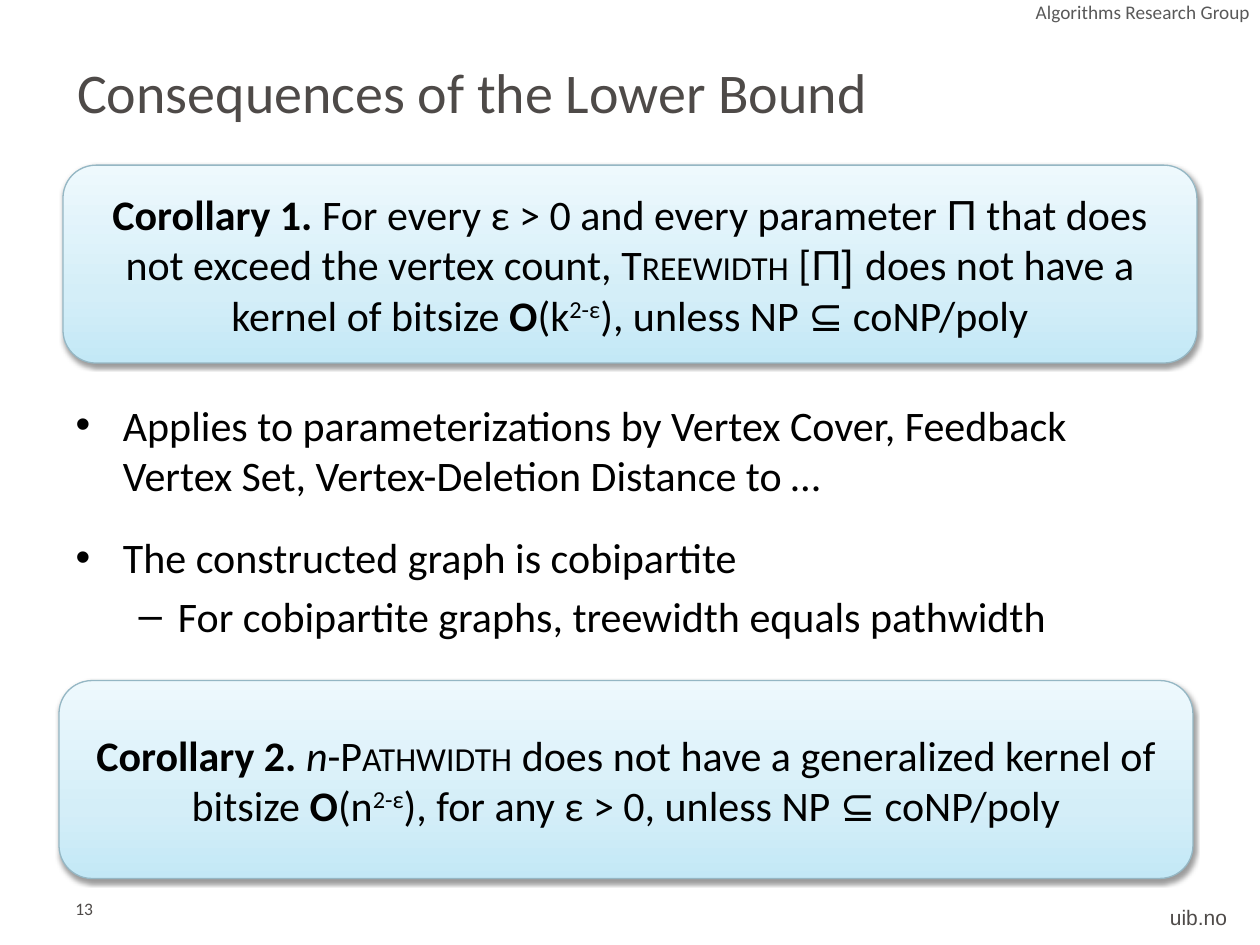
"""Build the slide on consequences of the treewidth kernel lower bound."""

from dataclasses import dataclass

import lxml.etree
import pptx
import pptx.dml.color
import pptx.enum.shapes
import pptx.enum.text
import pptx.oxml.ns
import pptx.util
from pptx.util import Cm

ALIGN = pptx.enum.text.PP_ALIGN
ANCHOR = pptx.enum.text.MSO_ANCHOR
AUTO_SIZE = pptx.enum.text.MSO_AUTO_SIZE
qualified = pptx.oxml.ns.qn

BLACK = "000000"
BODY_SIZE = 24
GRADIENT = ((0, "C3E8F6"), (35, "D4EEF8"), (100, "EEF9FD"))


@dataclass(frozen=True)
class Box:
    left: float
    top: float
    width: float
    height: float

    def lengths(self) -> tuple:
        return Cm(self.left), Cm(self.top), Cm(self.width), Cm(self.height)


@dataclass(frozen=True)
class Run:
    text: str
    size: float = BODY_SIZE
    color: str = BLACK
    font: str = "Calibri"
    bold: bool = False
    italic: bool = False
    small_caps: bool = False
    superscript: bool = False


@dataclass(frozen=True)
class Corollary:
    box: Box
    runs: tuple[Run, ...]


@dataclass(frozen=True)
class Label:
    box: Box
    run: Run
    alignment: ALIGN
    margins: tuple[float, float, float, float]
    wrap: bool = True


@dataclass(frozen=True)
class Bullet:
    text: str
    level: int = 0
    space_before: float | None = None


TITLE_BOX = Box(1.3, 0.97, 22.86, 1.75)
TITLE = Run("Consequences of the Lower Bound", 32, "4E4A48")
BODY_BOX = Box(1.27, 7.92, 22.86, 9.09)
BULLETS = (
    Bullet(
        "Applies to parameterizations by Vertex Cover, Feedback Vertex Set, "
        "Vertex-Deletion Distance to …",
        space_before=0,
    ),
    Bullet("The constructed graph is cobipartite", space_before=18),
    Bullet("For cobipartite graphs, treewidth equals pathwidth", level=1),
)
LABELS = (
    Label(Box(23.32, 18.11, 1.68, 0.76), Run("uib.no", 12, "4E4A48", "Arial"),
          ALIGN.CENTER, (0.25, 0.13, 0.25, 0.13), wrap=False),
    Label(Box(11.91, 0, 13.54, 0.51), Run("Algorithms Research Group", 11, "595959"),
          ALIGN.RIGHT, (0.25, 0, 0.25, 0)),
    Label(Box(1.27, 18.11, 5.44, 0.76), Run("13", 10, "4E4A48"),
          ALIGN.LEFT, (0.25, 0, 0.25, 0.13)),
)
COROLLARIES = (
    Corollary(Box(1.27, 3.33, 22.86, 3.99), (
        Run("Corollary 1. ", bold=True),
        Run("For every ε > 0 and every parameter "),
        Run("Π", font="Arial"),
        Run(" that does not exceed the vertex count, "),
        Run("Treewidth", small_caps=True),
        Run(" ["),
        Run("Π] ", font="Arial"),
        Run("does not have a kernel of bitsize "),
        Run("O", bold=True),
        Run("(k"),
        Run("2-ε", superscript=True),
        Run("), unless NP ⊆ coNP/poly"),
    )),
    Corollary(Box(1.19, 13.72, 22.86, 3.99), (
        Run("Corollary 2. ", bold=True),
        Run("n", italic=True),
        Run("-"),
        Run("Pathwidth", small_caps=True),
        Run(" does not have a generalized kernel of bitsize "),
        Run("O", bold=True),
        Run("(n"),
        Run("2-ε", superscript=True),
        Run("), for any ε > 0, unless NP ⊆ coNP/poly"),
    )),
)


def rgb(color: str) -> pptx.dml.color.RGBColor:
    return pptx.dml.color.RGBColor.from_string(color)


def add_element(parent, tag: str, **attributes):
    values = {name: str(value) for name, value in attributes.items()}
    return lxml.etree.SubElement(parent, qualified(tag), values)


def add_run(paragraph, run: Run) -> None:
    text_run = paragraph.add_run()
    text_run.text = run.text
    font = text_run.font
    font.name = run.font
    font.size = pptx.util.Pt(run.size)
    font.bold = run.bold
    font.italic = run.italic
    font.color.rgb = rgb(run.color)
    properties = text_run._r.get_or_add_rPr()
    if run.small_caps:
        properties.set("cap", "small")
    if run.superscript:
        properties.set("baseline", "30000")


def place(shape, box: Box) -> None:
    shape.left, shape.top, shape.width, shape.height = box.lengths()


def fill_title(shape) -> None:
    place(shape, TITLE_BOX)
    frame = shape.text_frame
    frame.auto_size = AUTO_SIZE.NONE
    frame.vertical_anchor = ANCHOR.MIDDLE
    paragraph = frame.paragraphs[0]
    paragraph.alignment = ALIGN.LEFT
    add_run(paragraph, TITLE)


def fill_body(shape) -> None:
    place(shape, BODY_BOX)
    frame = shape.text_frame
    frame.auto_size = AUTO_SIZE.NONE
    for index, bullet in enumerate(BULLETS):
        paragraph = frame.add_paragraph() if index else frame.paragraphs[0]
        paragraph.level = bullet.level
        if bullet.space_before is not None:
            paragraph.space_before = pptx.util.Pt(bullet.space_before)
        add_run(paragraph, Run(bullet.text))


def add_label(slide, label: Label) -> None:
    frame = slide.shapes.add_textbox(*label.box.lengths()).text_frame
    frame.word_wrap = label.wrap
    (frame.margin_left, frame.margin_top,
     frame.margin_right, frame.margin_bottom) = map(Cm, label.margins)
    paragraph = frame.paragraphs[0]
    paragraph.alignment = label.alignment
    add_run(paragraph, label.run)


def style_panel(shape) -> None:
    shape.fill.gradient()
    shape.fill.gradient_angle = 90
    properties = shape._element.spPr
    stops = properties.find(".//" + qualified("a:gsLst"))
    stops.clear()
    for position, color in GRADIENT:
        stop = add_element(stops, "a:gs", pos=position * 1000)
        add_element(stop, "a:srgbClr", val=color)
    shape.line.color.rgb = rgb("95B7C4")
    shape.line.width = pptx.util.Pt(0.75)
    shape.shadow.inherit = False
    shadow = add_element(properties.find(qualified("a:effectLst")), "a:outerShdw",
                         blurRad=40000, dist=20000, dir=5400000, rotWithShape=0)
    shadow_color = add_element(shadow, "a:srgbClr", val=BLACK)
    add_element(shadow_color, "a:alpha", val=38000)


def add_corollary(slide, corollary: Corollary) -> None:
    rounded = pptx.enum.shapes.MSO_SHAPE.ROUNDED_RECTANGLE
    shape = slide.shapes.add_shape(rounded, *corollary.box.lengths())
    style_panel(shape)
    frame = shape.text_frame
    frame.word_wrap = True
    frame.vertical_anchor = ANCHOR.MIDDLE
    paragraph = frame.paragraphs[0]
    paragraph.alignment = ALIGN.CENTER
    for run in corollary.runs:
        add_run(paragraph, run)


def main() -> None:
    presentation = pptx.Presentation()
    presentation.slide_width, presentation.slide_height = Cm(25.4), Cm(19.05)
    slide = presentation.slides.add_slide(presentation.slide_layouts[1])
    fill_title(slide.shapes.title)
    fill_body(slide.placeholders[1])
    for label in LABELS:
        add_label(slide, label)
    for corollary in COROLLARIES:
        add_corollary(slide, corollary)
    presentation.save("out.pptx")


if __name__ == "__main__":
    main()
